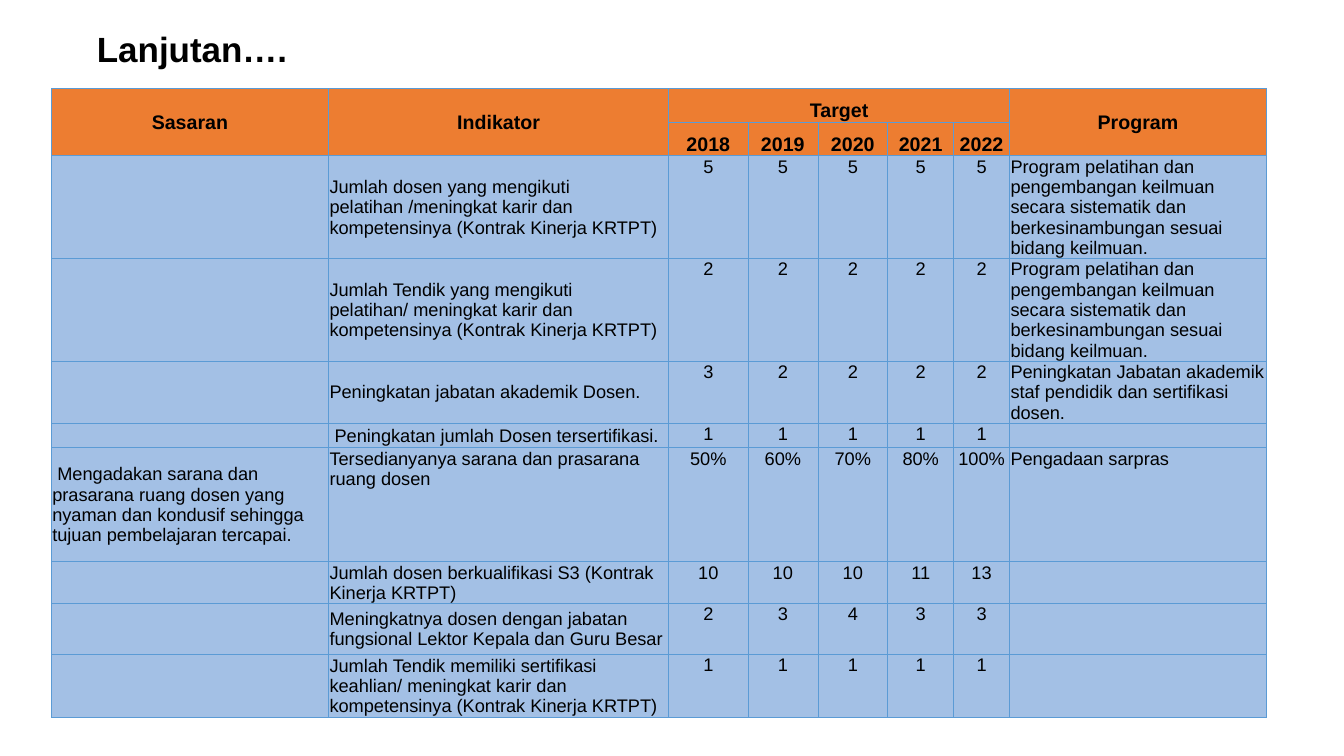
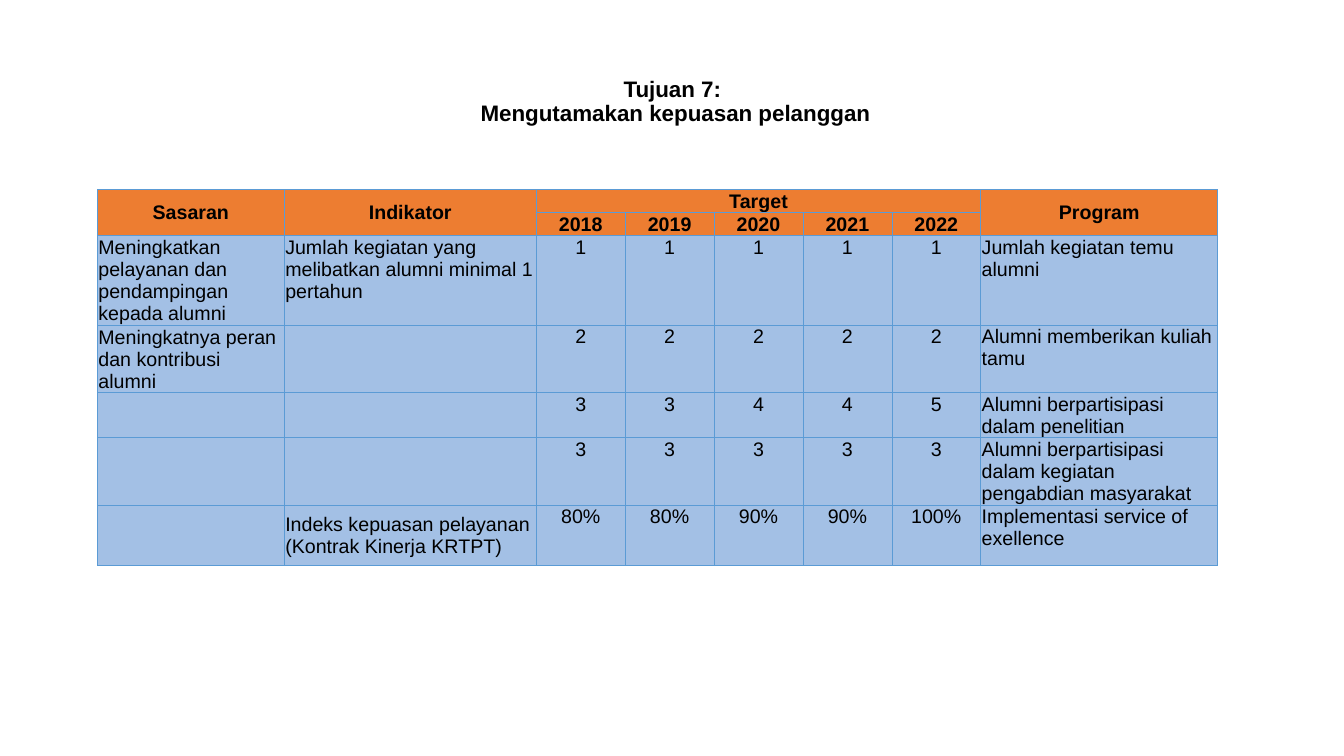
import pptx
import pptx.dml.color
import pptx.enum.text
import pptx.oxml
import pptx.oxml.ns
import pptx.util
import lxml.etree

Pt = pptx.util.Pt
ALIGN = pptx.enum.text.PP_ALIGN
ANCHOR = pptx.enum.text.MSO_ANCHOR

FONT = "Arial"
COLOURS = {"text": "000000", "header": "ED7D31", "body": "A3C0E5", "border": "5B9BD5"}
MARGINS = {"margin_left": Pt(0.7), "margin_top": Pt(0.7), "margin_right": Pt(0.7), "margin_bottom": 0}
YEARS = ["2018", "2019", "2020", "2021", "2022"]
HEADER_SIZE = 14
FIRST_YEAR = 2
PROGRAM = FIRST_YEAR + len(YEARS)

TRAINING = ("Program pelatihan dan pengembangan keilmuan secara sistematik dan "
            "berkesinambungan sesuai bidang keilmuan.")

STAFF_ROWS = [
    ("", "Jumlah dosen yang mengikuti\npelatihan /meningkat karir dan\nkompetensinya (Kontrak Kinerja KRTPT)",
     "5 5 5 5 5", TRAINING),
    ("", "Jumlah Tendik yang mengikuti\npelatihan/ meningkat karir dan\nkompetensinya (Kontrak Kinerja KRTPT)",
     "2 2 2 2 2", TRAINING),
    ("", "Peningkatan jabatan akademik Dosen.", "3 2 2 2 2",
     "Peningkatan Jabatan akademik staf pendidik dan sertifikasi dosen."),
    ("", " Peningkatan jumlah Dosen tersertifikasi.", "1 1 1 1 1", ""),
    (" Mengadakan sarana dan prasarana ruang dosen yang nyaman dan kondusif sehingga "
     "tujuan pembelajaran tercapai.",
     "Tersedianyanya sarana dan prasarana ruang dosen", "50% 60% 70% 80% 100%", "Pengadaan sarpras"),
    ("", "Jumlah dosen berkualifikasi S3 (Kontrak Kinerja KRTPT)", "10 10 10 11 13", ""),
    ("", "Meningkatnya dosen dengan jabatan fungsional Lektor Kepala dan Guru Besar", "2 3 4 3 3", ""),
    ("", "Jumlah Tendik memiliki sertifikasi keahlian/ meningkat karir dan kompetensinya "
     "(Kontrak Kinerja KRTPT)", "1 1 1 1 1", ""),
]

ALUMNI_ROWS = [
    ("Meningkatkan pelayanan dan pendampingan kepada alumni",
     "Jumlah kegiatan yang melibatkan alumni minimal 1 pertahun", "1 1 1 1 1", "Jumlah kegiatan temu alumni"),
    ("Meningkatnya peran dan kontribusi alumni", "", "2 2 2 2 2", "Alumni memberikan kuliah tamu"),
    ("", "", "3 3 4 4 5", "Alumni berpartisipasi dalam penelitian"),
    ("", "", "3 3 3 3 3", "Alumni berpartisipasi dalam kegiatan pengabdian masyarakat"),
    ("", "Indeks kepuasan pelayanan\n(Kontrak Kinerja KRTPT)", "80% 80% 90% 90% 100%",
     "Implementasi service of exellence"),
]


def rgb(colour):
    """Turn a hex string into a colour."""
    return pptx.dml.color.RGBColor.from_string(colour)


def set_attributes(target, values):
    """Set every attribute named in a dict."""
    for name, value in values.items():
        setattr(target, name, value)


def write_text(paragraph, text, size, bold, align):
    """Write text into a paragraph, with a line break at each newline."""
    paragraph.alignment = align
    for index, line in enumerate(text.split("\n")):
        if index:
            paragraph.add_line_break()
        if line:
            run = paragraph.add_run()
            run.text = line
            set_attributes(run.font, {"name": FONT, "size": Pt(size), "bold": bold})
            run.font.color.rgb = rgb(COLOURS["text"])
    if not text:
        end = lxml.etree.SubElement(paragraph._p, pptx.oxml.ns.qn("a:endParaRPr"))
        end.set("sz", str(size * 100))


def add_title(slide, text, box, size, align):
    """Place and format the title placeholder."""
    title = slide.shapes.title
    set_attributes(title, dict(zip(("left", "top", "width", "height"), map(Pt, box))))
    frame = title.text_frame
    set_attributes(frame, {"word_wrap": True, "vertical_anchor": ANCHOR.MIDDLE,
                           "auto_size": pptx.enum.text.MSO_AUTO_SIZE.NONE})
    paragraph = frame.paragraphs[0]
    paragraph.line_spacing = 0.9
    write_text(paragraph, text, size, True, align)


def add_borders(cell):
    """Draw a thin line on all four sides of a cell."""
    properties = cell._tc.get_or_add_tcPr()
    for index, side in enumerate(("lnL", "lnR", "lnT", "lnB")):
        properties.insert(index, pptx.oxml.parse_xml(
            f'<a:{side} {pptx.oxml.ns.nsdecls("a")} w="{Pt(0.5)}"><a:solidFill>'
            f'<a:srgbClr val="{COLOURS["border"]}"/></a:solidFill></a:{side}>'))


def fill_cell(cell, text, size, fill, anchor, align=ALIGN.LEFT, bold=False):
    """Write and format one table cell."""
    set_attributes(cell, {**MARGINS, "vertical_anchor": anchor})
    cell.fill.solid()
    cell.fill.fore_color.rgb = rgb(fill)
    add_borders(cell)
    write_text(cell.text_frame.paragraphs[0], text, size, bold, align)


def fill_header(table):
    """Write the two header rows and merge their cells."""
    labels = [["Sasaran", "Indikator", "Target", "", "", "", "", "Program"], ["", "", *YEARS, ""]]
    for row, texts in enumerate(labels):
        for column, text in enumerate(texts):
            anchor = ANCHOR.BOTTOM if FIRST_YEAR <= column < PROGRAM else ANCHOR.MIDDLE
            fill_cell(table.cell(row, column), text, HEADER_SIZE, COLOURS["header"], anchor, ALIGN.CENTER, True)
    for column in (0, 1, PROGRAM):
        table.cell(0, column).merge(table.cell(1, column))
    table.cell(0, FIRST_YEAR).merge(table.cell(0, PROGRAM - 1))


def add_target_table(slide, left, top, widths, heights, rows, size):
    """Add a table of goals, indicators, yearly targets and programmes."""
    frame = slide.shapes.add_table(len(heights), len(widths), Pt(left), Pt(top),
                                   Pt(sum(widths)), Pt(sum(heights)))
    table = frame.table
    set_attributes(table, {"first_row": False, "horz_banding": False})
    for column, width in zip(table.columns, widths):
        column.width = Pt(width)
    for row, height in zip(table.rows, heights):
        row.height = Pt(height)
    fill_header(table)
    for row, (goal, indicator, targets, program) in enumerate(rows, start=2):
        indicator_anchor = ANCHOR.TOP if goal else ANCHOR.MIDDLE
        fill_cell(table.cell(row, 0), goal, size, COLOURS["body"], ANCHOR.MIDDLE)
        fill_cell(table.cell(row, 1), indicator, size, COLOURS["body"], indicator_anchor)
        for column, target in enumerate(targets.split(), start=FIRST_YEAR):
            fill_cell(table.cell(row, column), target, size, COLOURS["body"], ANCHOR.TOP, ALIGN.CENTER)
        fill_cell(table.cell(row, PROGRAM), program, size, COLOURS["body"], ANCHOR.TOP)


def main():
    """Build the two slides and save them."""
    deck = pptx.Presentation()
    set_attributes(deck, {"slide_width": Pt(960), "slide_height": Pt(540)})
    title_only = deck.slide_layouts[5]

    staff = deck.slides.add_slide(title_only)
    add_title(staff, "Lanjutan….", (62, 17, 828, 39), 25, ALIGN.LEFT)
    add_target_table(staff, 36.7, 63.2, [198, 243, 56.5, 50, 50, 47, 40, 183.5],
                     [24, 24, 73.4, 73.4, 43.6, 17.6, 81.4, 29.5, 36.5, 44.8], STAFF_ROWS, 13)

    alumni = deck.slides.add_slide(title_only)
    add_title(alumni, "Tujuan 7: \nMengutamakan kepuasan pelanggan", (68.5, 48, 828, 50), 16, ALIGN.CENTER)
    add_target_table(alumni, 69.6, 135.4, [133.5, 180] + [63.5] * len(YEARS) + [169.3],
                     [16.5, 16.5, 63.5, 48.5, 32, 48, 42.8], ALUMNI_ROWS, 14)

    deck.save("out.pptx")


if __name__ == "__main__":
    main()
